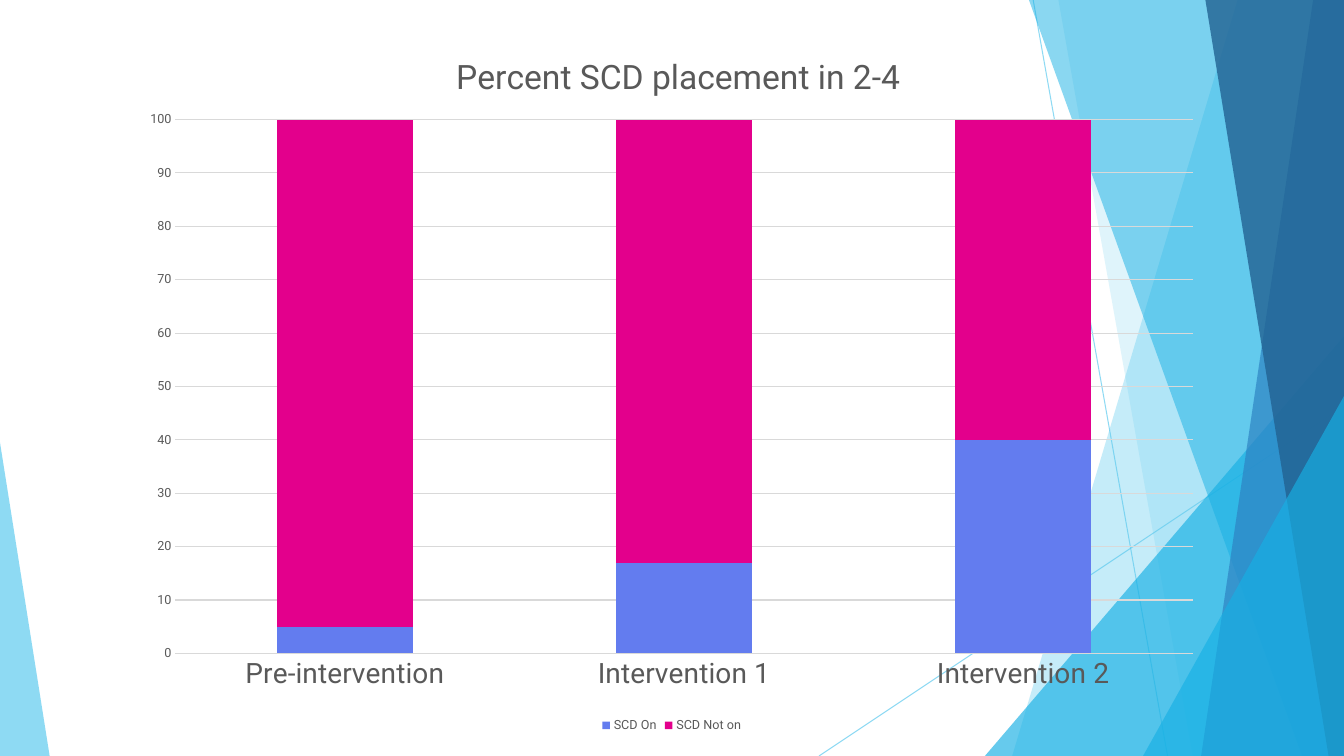
from lxml.etree import Element, SubElement as Sub
from pptx import Presentation
from pptx.chart.data import CategoryChartData as Data
from pptx.dml.color import RGBColor as RGB
from pptx.enum.chart import XL_CHART_TYPE as Kind, XL_LEGEND_POSITION as Place, XL_TICK_MARK as Tick
from pptx.enum.shapes import MSO_CONNECTOR as Link, MSO_SHAPE as Form
from pptx.oxml.ns import qn
from pptx.util import Pt

WIDE, HIGH = 960, 540
FONT = "Roboto"
GREY, PALE = "595959", "D9D9D9"
SKY, CYAN, BLUE, NAVY = "5FCBEF", "17B0E4", "2E83C3", "226292"


def paint(fill, color, alpha=100):
    fill.solid()
    fill.fore_color.rgb = RGB.from_string(color)
    if alpha < 100:
        tone = fill._xPr.find(qn("a:solidFill"))[0]
        Sub(tone, qn("a:alpha"), val=str(alpha * 1000))


def style(font, size, color=GREY):
    font.name = FONT
    font.size = Pt(size)
    font.bold = False
    paint(font.fill, color)


def rule(line, color, alpha=100):
    line.width = Pt(0.75)
    paint(line.fill, color, alpha)


def ray(slide, *ends):
    line = slide.shapes.add_connector(Link.STRAIGHT, *map(Pt, ends))
    rule(line.line, SKY, 70)
    Sub(line._element.spPr, qn("a:effectLst"))


def finish(shape, color, alpha):
    shape.shadow.inherit = False
    shape.line.fill.background()
    paint(shape.fill, color, alpha)


def facet(slide, top, base, color, alpha):
    pen = slide.shapes.build_freeform(Pt(top), 0)
    edge = [(WIDE, 0), (WIDE, HIGH), (base, HIGH)]
    pen.add_line_segments([(Pt(x), Pt(y)) for x, y in edge], close=True)
    finish(pen.convert_to_shape(), color, alpha)


def wedge(slide, left, top, width, peak, color, alpha):
    box = map(Pt, (left, top, width, HIGH - top))
    shape = slide.shapes.add_shape(Form.ISOSCELES_TRIANGLE, *box)
    shape.adjustments[0] = peak
    finish(shape, color, alpha)


def settle(owner, index, **spots):
    old = owner.find(qn("c:layout"))
    if old is not None:
        owner.remove(old)
    node = Element(qn("c:layout"))
    owner.insert(index, node)
    manual = Sub(node, qn("c:manualLayout"))
    if "w" in spots:
        Sub(manual, qn("c:layoutTarget"), val="inner")
    for mode in ("xMode", "yMode"):
        Sub(manual, qn("c:" + mode), val="edge")
    for key, spot in spots.items():
        Sub(manual, qn("c:" + key), val=str(spot))


def axes(chart):
    cat, val = chart.category_axis, chart.value_axis
    for axis, size in ((cat, 20), (val, 9)):
        axis.major_tick_mark = axis.minor_tick_mark = Tick.NONE
        style(axis.tick_labels.font, size)
    rule(cat.format.line, PALE)
    val.format.line.fill.background()
    val.minimum_scale, val.maximum_scale, val.major_unit = 0, 100, 10
    rule(val.major_gridlines.format.line, PALE)


def graph(slide):
    on = (5, 17, 40)
    data = Data()
    data.categories = ["Pre-intervention", "Intervention 1", "Intervention 2"]
    data.add_series("SCD On", on)
    data.add_series("SCD Not on", [100 - part for part in on])
    box = map(Pt, (92, 13.7, 775.5, 512.6))
    chart = slide.shapes.add_chart(Kind.COLUMN_STACKED, *box, data).chart
    style(chart.font, 10, "000000")

    plot = chart.plots[0]
    plot.gap_width, plot.overlap = 150, 100
    plot.vary_by_categories = False
    for row, color in zip(plot.series, ("637CEF", "E3008C")):
        paint(row.format.fill, color)
    axes(chart)

    chart.has_legend = True
    chart.legend.position = Place.BOTTOM
    chart.legend.include_in_layout = False
    style(chart.legend.font, 9)

    chart.has_title = True
    title = chart.chart_title
    title.text_frame.text = "Percent SCD placement in 2-4"
    style(title.text_frame.paragraphs[0].runs[0].font, 24)
    title.include_in_layout = False
    settle(title._element, 1, x=0.296, y=0.04)
    area = chart._chartSpace.chart.plotArea
    settle(area, 0, x=0.043, y=0.14, w=0.937, h=0.744)


def main():
    deck = Presentation()
    deck.slide_width, deck.slide_height = Pt(WIDE), Pt(HIGH)
    slide = deck.slides.add_slide(deck.slide_layouts[6])

    ray(slide, 738, 0, 834, HIGH)
    ray(slide, WIDE, 290, 585, HIGH)
    facet(slide, 884, 723, SKY, 36)
    facet(slide, 756, 852, SKY, 20)
    wedge(slide, 703.5, 240, 256.5, 1, CYAN, 66)
    facet(slide, 735, 930, CYAN, 50)
    facet(slide, 938, 858, BLUE, 70)
    facet(slide, 861, 949, NAVY, 80)
    wedge(slide, 816.5, 283, 143.5, 1, CYAN, 66)
    wedge(slide, 0, 316, 35.5, 0, SKY, 70)
    graph(slide)

    deck.save("out.pptx")


if __name__ == "__main__":
    main()
